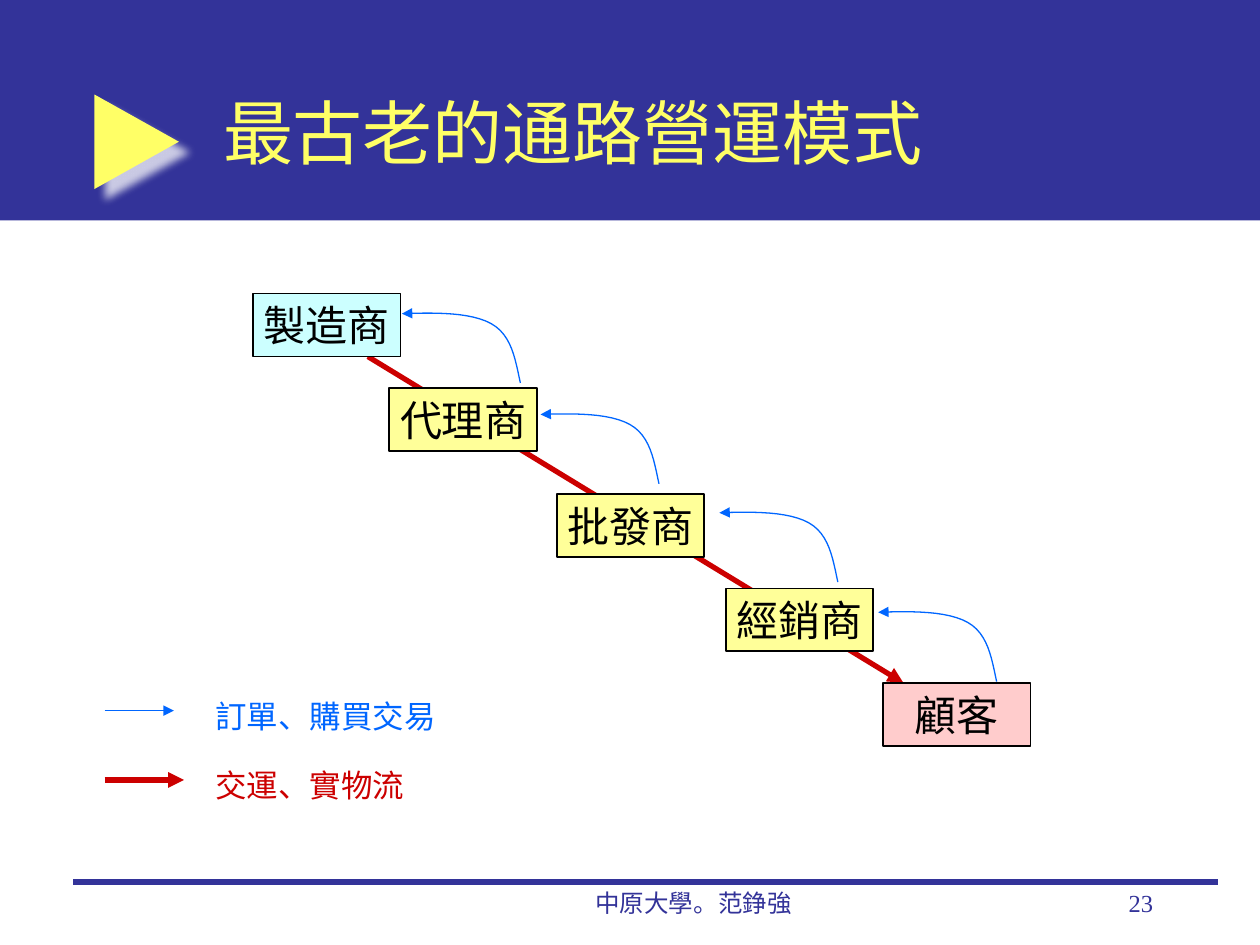
from lxml import etree
from pptx import Presentation
from pptx.dml.color import RGBColor
from pptx.enum.shapes import MSO_CONNECTOR as Conn, MSO_SHAPE as Kind
from pptx.enum.text import MSO_ANCHOR as Anchor, PP_ALIGN as Align
from pptx.oxml import parse_xml
from pptx.oxml.ns import nsdecls, qn
from pptx.util import Inches, Pt

NAVY, YELLOW, RED, BLUE, BLACK = "333399", "FFFF66", "CC0000", "0066FF", "000000"
SERIF = "Times New Roman"
rgb = RGBColor.from_string


def write(shape, text, size, tint, align=Align.LEFT, wrap=True, anchor=Anchor.TOP, face=SERIF):
    frame = shape.text_frame
    frame.text = text
    for key, val in {"word_wrap": wrap, "vertical_anchor": anchor}.items():
        setattr(frame, key, val)
    para = frame.paragraphs[0]
    para.alignment = align
    for key, val in {"size": Pt(size), "name": face, "bold": False}.items():
        setattr(para.font, key, val)
    para.font.color.rgb = rgb(tint)


def stroke(shape, tint, width, end=None):
    shape.line.color.rgb = rgb(tint)
    shape.line.width = Pt(width)
    if end:
        tip = etree.SubElement(shape.line._get_or_add_ln(), qn(f"a:{end}"))
        tip.set("type", "triangle")
    if shape._element.spPr.find(qn("a:effectLst")) is None:
        etree.SubElement(shape._element.spPr, qn("a:effectLst"))


deck = Presentation()
deck.slide_width, deck.slide_height = Inches(10), Inches(7.5)
slide = deck.slides.add_slide(deck.slide_layouts[5])
shapes = slide.shapes
title = shapes.title

band = shapes.add_shape(Kind.RECTANGLE, 0, 0, Inches(10), Inches(1.75))
mark = shapes.add_shape(Kind.RIGHT_ARROW, Inches(0.75), Inches(0.75), Inches(0.67), Inches(0.75))
mark.adjustments[0], mark.adjustments[1] = 0.384, 1
for shape, tint in ((band, NAVY), (mark, YELLOW)):
    shape.shadow.inherit = False
    shape.fill.solid()
    shape.fill.fore_color.rgb = rgb(tint)
    shape.line.fill.background()
glow = mark._element.spPr.find(qn("a:effectLst"))
glow.append(parse_xml(
    f'<a:outerShdw {nsdecls("a")} blurRad="{Pt(5)}" dist="{Pt(8.5)}" dir="2700000" '
    'algn="ctr" rotWithShape="0"><a:srgbClr val="FFFFFF"><a:alpha val="75000"/>'
    '</a:srgbClr></a:outerShdw>'))

shapes._spTree.append(title._element)
spot = {"left": 1.67, "top": 0.42, "width": 7.58, "height": 1.25}
for key, val in spot.items():
    setattr(title, key, Inches(val))
write(title, "最古老的通路營運模式", 40, YELLOW, anchor=Anchor.MIDDLE, face="Arial")

lines = [
    (0.58, 7, 9.67, 7, NAVY, 3, None),
    (2.92, 2.83, 7.17, 5.42, RED, 3, "tailEnd"),
    (0.83, 5.64, 1.38, 5.64, BLUE, 0.75, "tailEnd"),
    (0.83, 6.19, 1.46, 6.19, RED, 3, "tailEnd"),
]
for *ends, tint, width, end in lines:
    line = shapes.add_connector(Conn.STRAIGHT, *map(Inches, ends))
    stroke(line, tint, width, end)

roles = [
    ("製造商", 2.01, 2.33, "CCFFFF"),
    ("代理商", 3.09, 3.08, "FFFF99"),
    ("批發商", 4.42, 3.92, "FFFF99"),
    ("經銷商", 5.76, 4.67, "FFFF99"),
    ("顧客", 7.01, 5.42, "FFCCCC"),
]
for name, left, top, tint in roles:
    box = shapes.add_shape(Kind.RECTANGLE, Inches(left), Inches(top), Inches(1.17), Inches(0.5))
    box.shadow.inherit = False
    box.fill.solid()
    box.fill.fore_color.rgb = rgb(tint)
    stroke(box, BLACK, 1)
    write(box, name, 24, BLACK, Align.CENTER, False, Anchor.MIDDLE)

bends = [
    ((0, 0.01), (0.27, 0), (0.55, 0), (0.71, 0.09)),
    ((0.71, 0.09), (0.87, 0.18), (0.9, 0.37), (0.94, 0.56)),
]
steps = 12
curve = []
for bend in bends:
    for step in range(1, steps + 1):
        t = step / steps
        parts = ((1 - t) ** 3, 3 * t * (1 - t) ** 2, 3 * t * t * (1 - t), t ** 3)
        curve.append([sum(p * c for p, c in zip(parts, axis)) for axis in zip(*bend)])
for left, top in ((3.19, 2.48), (4.29, 3.28), (5.71, 4.06), (6.97, 4.85)):
    pen = shapes.build_freeform(Inches(left), Inches(top + 0.01))
    pen.add_line_segments([(Inches(left + x), Inches(top + y)) for x, y in curve], close=False)
    order = pen.convert_to_shape()
    order.shadow.inherit = False
    order.fill.background()
    stroke(order, BLUE, 0.75, "headEnd")

notes = [
    ("訂單、購買交易", 1.61, 5.48, 1.95, 0.4, 18, BLUE, Align.LEFT, False),
    ("交運、實物流", 1.61, 6.03, 1.7, 0.4, 18, RED, Align.LEFT, False),
    ("中原大學。范錚強", 3.92, 7, 3.17, 0.5, 14, NAVY, Align.CENTER, True),
    ("23", 7.17, 7, 2.08, 0.5, 14, NAVY, Align.RIGHT, True),
]
for text, left, top, width, height, *style in notes:
    note = shapes.add_textbox(*map(Inches, (left, top, width, height)))
    write(note, text, *style)

deck.save("out.pptx")
